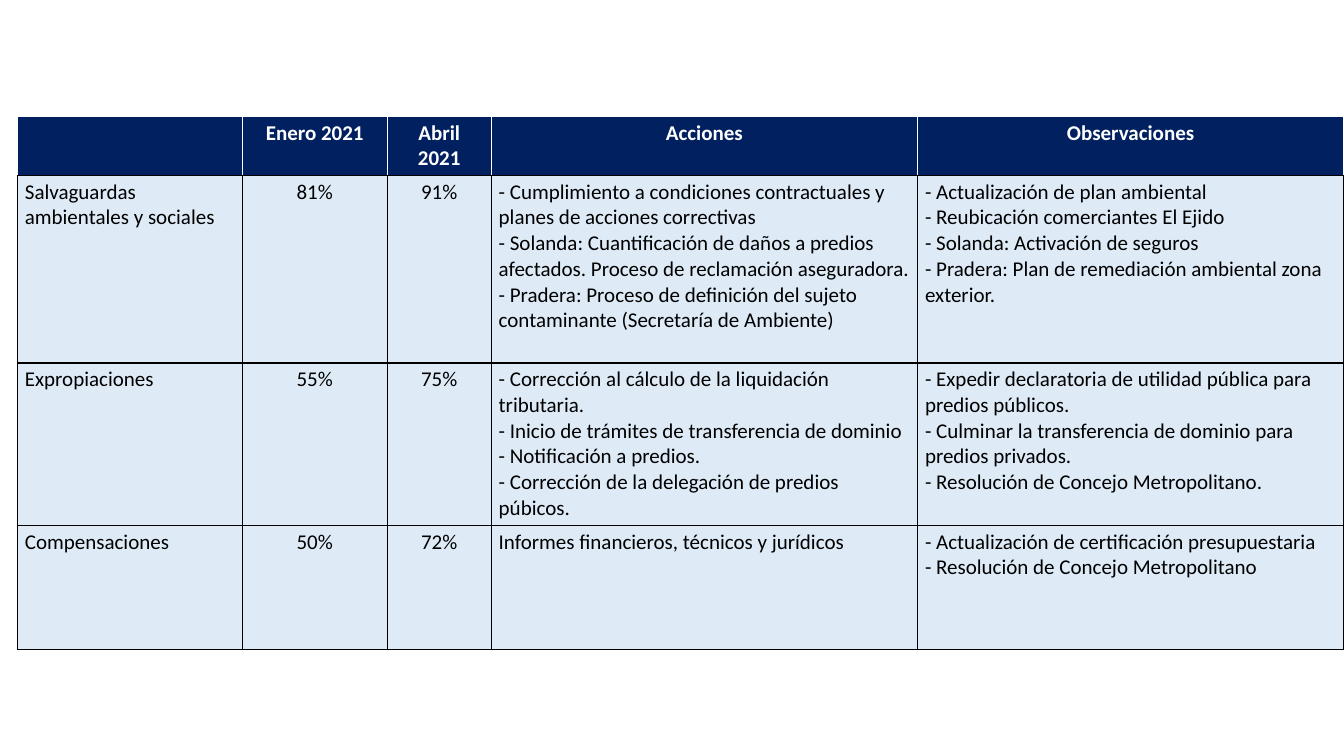
from dataclasses import dataclass

from lxml import etree
from pptx import Presentation
from pptx import util as u
from pptx.dml.color import RGBColor
from pptx.enum import text
from pptx.oxml import ns
from pptx.table import _Cell as Cell

NAVY = RGBColor(0x00, 0x20, 0x60)
PALE_BLUE = RGBColor(0xDE, 0xEB, 0xF7)
WHITE = RGBColor(0xFF, 0xFF, 0xFF)
BLACK = RGBColor(0x00, 0x00, 0x00)

FONT_NAME = "Calibri"
FONT_SIZE = u.Pt(15)
COLUMN_WIDTHS = (160.6, 103.7, 74.2, 304.5, 304.5)
CENTERED_COLUMNS = (1, 2)


@dataclass(frozen=True)
class Style:
    fill: RGBColor
    ink: RGBColor
    bold: bool
    edges: dict[str, RGBColor]


@dataclass(frozen=True)
class Row:
    height: float
    cells: tuple[str, ...]


HEADER = Style(NAVY, WHITE, True, {"L": WHITE, "R": WHITE, "T": WHITE, "B": BLACK})
BODY = Style(PALE_BLUE, BLACK, False, dict.fromkeys("LRTB", BLACK))

# Each line of a cell becomes a paragraph
ROWS = (
    Row(42, ("", "Enero 2021", "Abril 2021", "Acciones", "Observaciones")),
    Row(134, (
        "Salvaguardas ambientales y sociales", "81%", "91%",
        "- Cumplimiento a condiciones contractuales y planes de acciones correctivas\n"
        "- Solanda: Cuantificación de daños a predios afectados. "
        "Proceso de reclamación aseguradora.\n"
        "- Pradera: Proceso de definición del sujeto contaminante (Secretaría de Ambiente)",
        "- Actualización de plan ambiental\n"
        "- Reubicación comerciantes El Ejido\n"
        "- Solanda: Activación de seguros\n"
        "- Pradera: Plan de remediación ambiental zona exterior.",
    )),
    Row(116, (
        "Expropiaciones", "55%", "75%",
        "- Corrección al cálculo de la liquidación tributaria.\n"
        "- Inicio de trámites de transferencia de dominio\n"
        "- Notificación a predios.\n"
        "- Corrección de la delegación de predios púbicos.",
        "- Expedir declaratoria de utilidad pública para predios públicos.\n"
        "- Culminar la transferencia de dominio para predios privados.\n"
        "- Resolución de Concejo Metropolitano.",
    )),
    Row(88.5, (
        "Compensaciones", "50%", "72%",
        "Informes financieros, técnicos y jurídicos",
        "- Actualización de certificación presupuestaria\n"
        "- Resolución de Concejo Metropolitano",
    )),
)


def draw_borders(cell: Cell, edges: dict[str, RGBColor]) -> None:
    """Give the cell one-point edges, placed ahead of its fill."""
    properties = cell._tc.get_or_add_tcPr()
    for position, (side, color) in enumerate(edges.items()):
        line = etree.Element(ns.qn(f"a:ln{side}"), w=str(u.Pt(1)))
        solid = etree.SubElement(line, ns.qn("a:solidFill"))
        etree.SubElement(solid, ns.qn("a:srgbClr"), val=str(color))
        properties.insert(position, line)


def fill_cell(cell: Cell, content: str, style: Style, centered: bool) -> None:
    cell.margin_left = cell.margin_right = u.Pt(5.4)
    cell.margin_top = cell.margin_bottom = u.Pt(2.7)
    cell.vertical_anchor = text.MSO_ANCHOR.TOP
    cell.fill.solid()
    cell.fill.fore_color.rgb = style.fill
    draw_borders(cell, style.edges)

    for index, sentence in enumerate(content.splitlines()):
        frame = cell.text_frame
        para = frame.add_paragraph() if index else frame.paragraphs[0]
        para.alignment = text.PP_ALIGN.CENTER if centered else text.PP_ALIGN.LEFT
        span = para.add_run()
        span.text = sentence
        span.font.name = FONT_NAME
        span.font.size = FONT_SIZE
        span.font.bold = style.bold
        span.font.color.rgb = style.ink


def main() -> None:
    deck = Presentation()
    deck.slide_width, deck.slide_height = u.Pt(960), u.Pt(540)
    page = deck.slides.add_slide(deck.slide_layouts[6])

    # Progress table
    table = page.shapes.add_table(
        len(ROWS), len(COLUMN_WIDTHS), u.Pt(12.4), u.Pt(83.2),
        u.Pt(sum(COLUMN_WIDTHS)), u.Pt(sum(row.height for row in ROWS)),
    ).table
    for column, width in zip(table.columns, COLUMN_WIDTHS):
        column.width = u.Pt(width)
    for row_index, row in enumerate(ROWS):
        table.rows[row_index].height = u.Pt(row.height)
        is_header = row_index == 0
        for column_index, content in enumerate(row.cells):
            fill_cell(
                table.cell(row_index, column_index), content,
                HEADER if is_header else BODY,
                centered=is_header or column_index in CENTERED_COLUMNS,
            )

    deck.save("out.pptx")


if __name__ == "__main__":
    main()
